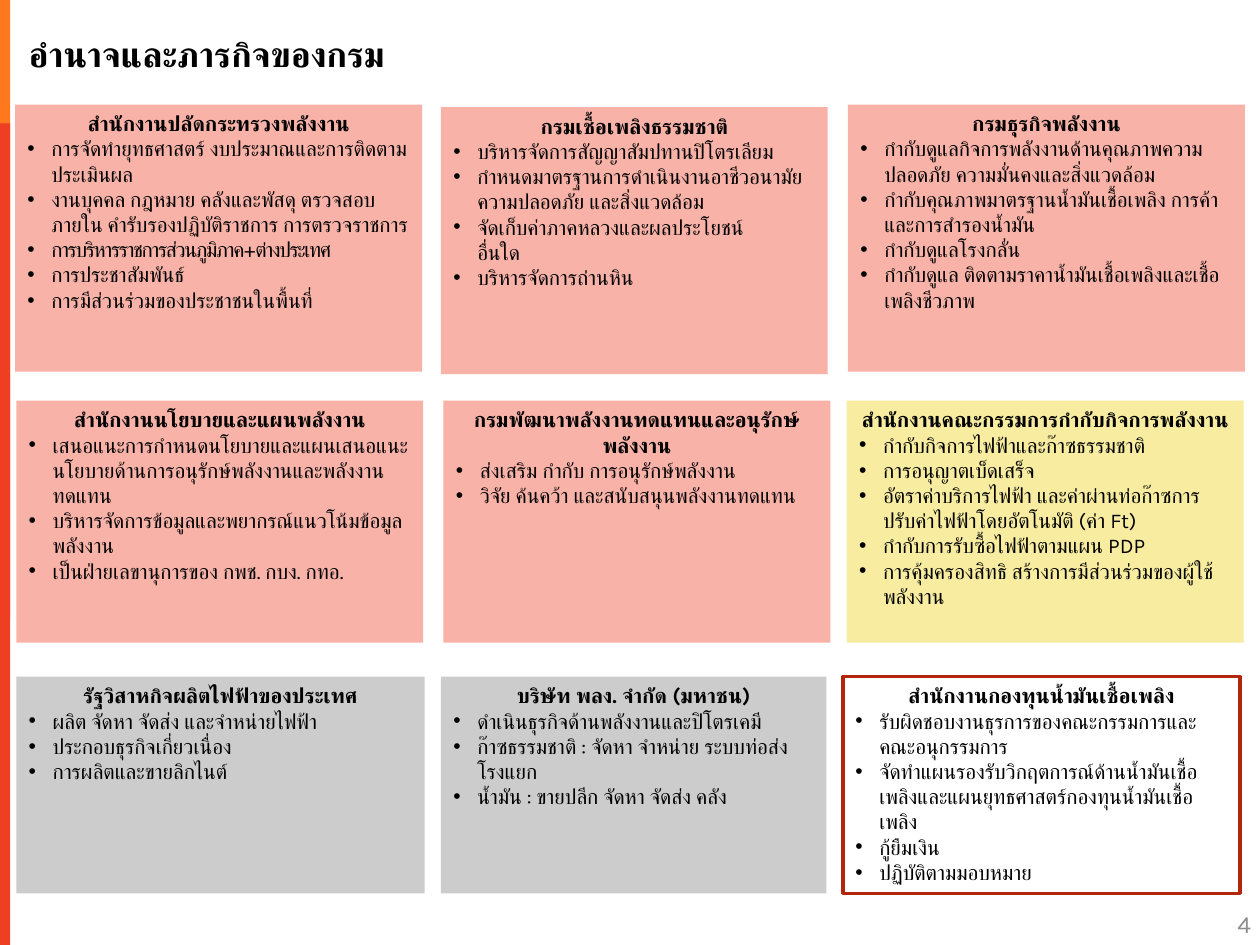
"""Build the slide on the powers and missions of the energy departments."""
from lxml import etree
from pptx import Presentation
from pptx.dml.color import RGBColor
from pptx.enum.shapes import MSO_SHAPE
from pptx.enum.text import MSO_ANCHOR, PP_ALIGN
from pptx.oxml.ns import qn
from pptx.util import Inches, Pt

RECT = MSO_SHAPE.RECTANGLE
TOP, BOTTOM = MSO_ANCHOR.TOP, MSO_ANCHOR.BOTTOM
LEFT, CENTER, RIGHT = PP_ALIGN.LEFT, PP_ALIGN.CENTER, PP_ALIGN.RIGHT
FONT = "Karla"
COLORS = {
    "orange": "FF781E", "red": "EE3F22", "pink": "F8B2A7", "yellow": "F7EC9F",
    "gray": "CCCCCC", "white": "FFFFFF", "border": "B3250D",
    "black": "000000", "number": "8C8C8C",
}
TIGHT = "การบริหารราชการส่วนภูมิภาค+ต่างประเทศ"
ROWS = [(0.83, 2.12), (3.18, 1.92), (5.37, 1.72)]
PANELS = [
    [
        (0.12, 0, 3.23, "pink", "สำนักงานปลัดกระทรวงพลังงาน", [
            "การจัดทำยุทธศาสตร์ งบประมาณและการติดตามประเมินผล",
            "งานบุคคล กฎหมาย คลังและพัสดุ ตรวจสอบภายใน คำรับรองปฏิบัติราชการ การตรวจราชการ",
            TIGHT,
            "การประชาสัมพันธ์",
            "การมีส่วนร่วมของประชาชนในพื้นที่",
        ]),
        (3.5, 0.02, 3.07, "pink", "กรมเชื้อเพลิงธรรมชาติ", [
            "บริหารจัดการสัญญาสัมปทานปิโตรเลียม",
            "กำหนดมาตรฐานการดำเนินงานอาชีวอนามัย ความปลอดภัย และสิ่งแวดล้อม",
            "จัดเก็บค่าภาคหลวงและผลประโยชน์\nอื่นใด",
            "บริหารจัดการถ่านหิน",
        ]),
        (6.73, 0, 3.15, "pink", "กรมธุรกิจพลังงาน", [
            "กำกับดูแลกิจการพลังงานด้านคุณภาพความปลอดภัย ความมั่นคงและสิ่งแวดล้อม",
            "กำกับคุณภาพมาตรฐานน้ำมันเชื้อเพลิง การค้าและการสำรองน้ำมัน",
            "กำกับดูแลโรงกลั่น",
            "กำกับดูแล ติดตามราคาน้ำมันเชื้อเพลิงและเชื้อเพลิงชีวภาพ",
        ]),
    ],
    [
        (0.13, 0, 3.23, "pink", "สำนักงานนโยบายและแผนพลังงาน", [
            "เสนอแนะการกำหนดนโยบายและแผนเสนอแนะนโยบายด้านการอนุรักษ์พลังงานและพลังงานทดแทน",
            "บริหารจัดการข้อมูลและพยากรณ์แนวโน้มข้อมูลพลังงาน",
            "เป็นฝ่ายเลขานุการของ กพช. กบง. กทอ.",
        ]),
        (3.52, 0, 3.07, "pink", "กรมพัฒนาพลังงานทดแทนและอนุรักษ์พลังงาน", [
            "ส่งเสริม กำกับ การอนุรักษ์พลังงาน",
            "วิจัย ค้นคว้า และสนับสนุนพลังงานทดแทน",
        ]),
        (6.72, 0, 3.15, "yellow", "สำนักงานคณะกรรมการกำกับกิจการพลังงาน", [
            "กำกับกิจการไฟฟ้าและก๊าซธรรมชาติ",
            "การอนุญาตเบ็ดเสร็จ",
            "อัตราค่าบริการไฟฟ้า และค่าผ่านท่อก๊าซการปรับค่าไฟฟ้าโดยอัตโนมัติ (ค่า Ft)",
            "กำกับการรับซื้อไฟฟ้าตามแผน PDP",
            "การคุ้มครองสิทธิ สร้างการมีส่วนร่วมของผู้ใช้พลังงาน",
        ]),
    ],
    [
        (0.13, 0, 3.24, "gray", "รัฐวิสาหกิจผลิตไฟฟ้าของประเทศ", [
            "ผลิต จัดหา จัดส่ง และจำหน่ายไฟฟ้า",
            "ประกอบธุรกิจเกี่ยวเนื่อง",
            "การผลิตและขายลิกไนต์",
        ]),
        (3.5, 0, 3.06, "gray", "บริษัท พลง. จำกัด (มหาชน)", [
            "ดำเนินธุรกิจด้านพลังงานและปิโตรเคมี",
            "ก๊าซธรรมชาติ : จัดหา จำหน่าย ระบบท่อส่ง โรงแยก",
            "น้ำมัน : ขายปลีก จัดหา จัดส่ง คลัง",
        ]),
        (6.69, 0, 3.15, "white", "สำนักงานกองทุนน้ำมันเชื้อเพลิง", [
            "รับผิดชอบงานธุรการของคณะกรรมการและคณะอนุกรรมการ",
            "จัดทำแผนรองรับวิกฤตการณ์ด้านน้ำมันเชื้อเพลิงและแผนยุทธศาสตร์กองทุนน้ำมันเชื้อเพลิง",
            "กู้ยืมเงิน",
            "ปฏิบัติตามมอบหมาย",
        ]),
    ],
]
LABELS = [
    (7.6, 7.05, 2.33, 0.4, "4", 14, "number", False, RIGHT, BOTTOM),
    (0.23, 0.26, 9.62, 0.33, "อำนาจและภารกิจของกรม", 20, "black", True, LEFT, TOP),
]


def add_box(x, y, w, h, fill):
    box = slide.shapes.add_shape(RECT, Inches(x), Inches(y), Inches(w), Inches(h))
    box.shadow.inherit = False
    box.fill.solid()
    box.fill.fore_color.rgb = RGBColor.from_string(COLORS[fill])
    box.line.fill.background()
    return box


def add_run(para, text, size, color, bold):
    run = para.add_run()
    run.text = text
    run.font.size = Pt(size)
    run.font.bold = bold
    run.font.name = FONT
    run.font.color.rgb = RGBColor.from_string(COLORS[color])
    props = run.font._element
    etree.SubElement(props, qn("a:cs")).set("typeface", FONT)
    if text == TIGHT:
        props.set("spc", "-80")


deck = Presentation()
deck.slide_width, deck.slide_height = Inches(10), Inches(7.5)
slide = deck.slides.add_slide(deck.slide_layouts[6])

add_box(0, 0, 0.08, 4.92, "orange")
add_box(0, 0.98, 0.08, 6.52, "red")

for (top, height), row in zip(ROWS, PANELS):
    for left, drop, width, fill, title, items in row:
        panel = add_box(left, top + drop, width, height, fill)
        if fill == "white":
            panel.line.color.rgb = RGBColor.from_string(COLORS["border"])
            panel.line.width = Pt(2)
        frame = panel.text_frame
        frame.word_wrap = True
        frame.vertical_anchor = TOP
        head = frame.paragraphs[0]
        head.alignment = CENTER
        add_run(head, title, 12, "black", True)
        for item in items:
            para = frame.add_paragraph()
            para.alignment = LEFT
            props = para._p.get_or_add_pPr()
            props.set("marL", str(Inches(0.19)))
            props.set("indent", str(-Inches(0.19)))
            etree.SubElement(props, qn("a:buFont")).set("typeface", "Arial")
            etree.SubElement(props, qn("a:buChar")).set("char", "•")
            for i, line in enumerate(item.split("\n")):
                if i:
                    para.add_line_break()
                add_run(para, line, 12, "black", False)

for x, y, w, h, text, size, color, bold, align, anchor in LABELS:
    label = slide.shapes.add_textbox(Inches(x), Inches(y), Inches(w), Inches(h))
    frame = label.text_frame
    frame.word_wrap = True
    frame.vertical_anchor = anchor
    frame.margin_left = frame.margin_right = 0
    frame.margin_top = frame.margin_bottom = 0
    para = frame.paragraphs[0]
    para.alignment = align
    add_run(para, text, size, color, bold)

deck.save("out.pptx")
